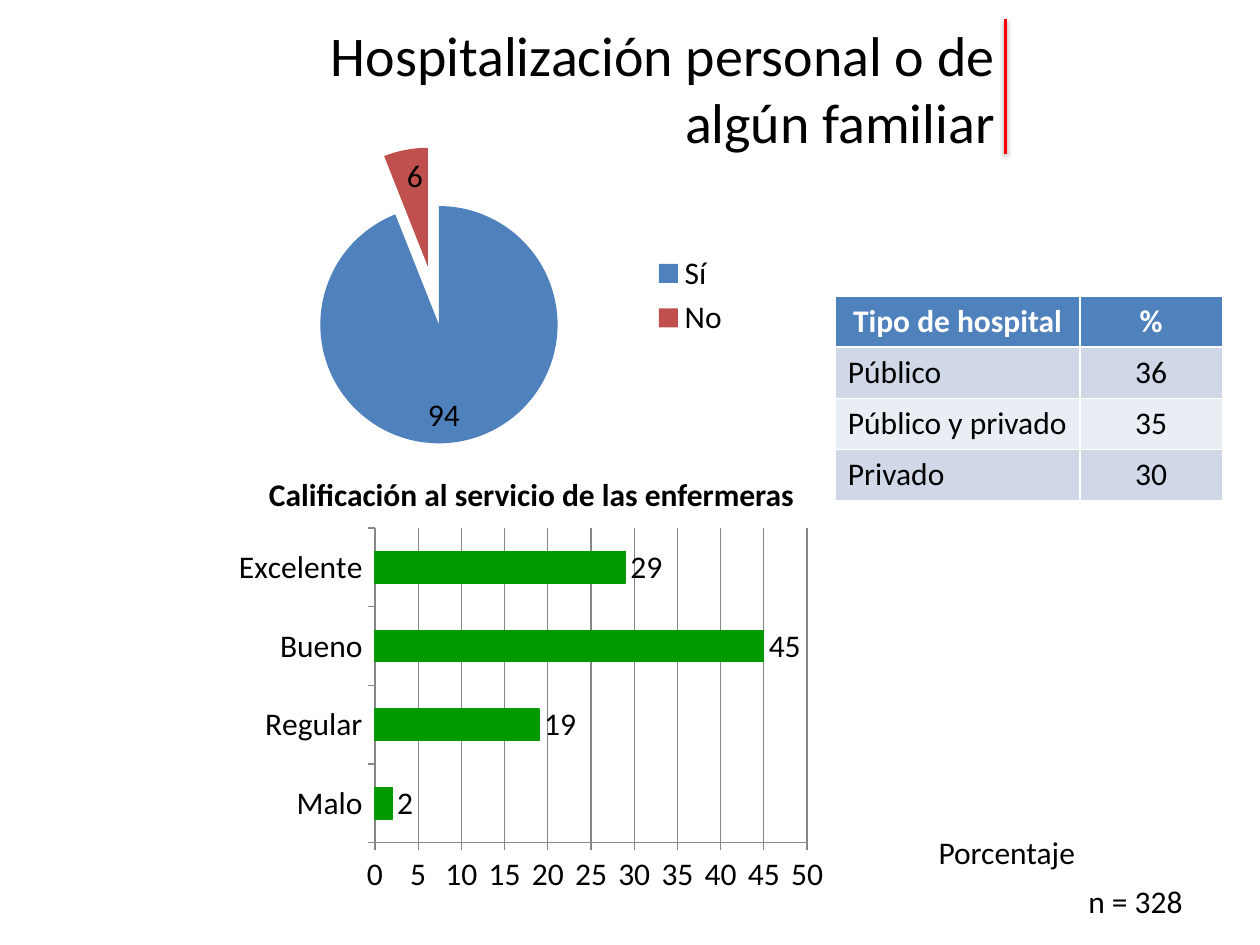
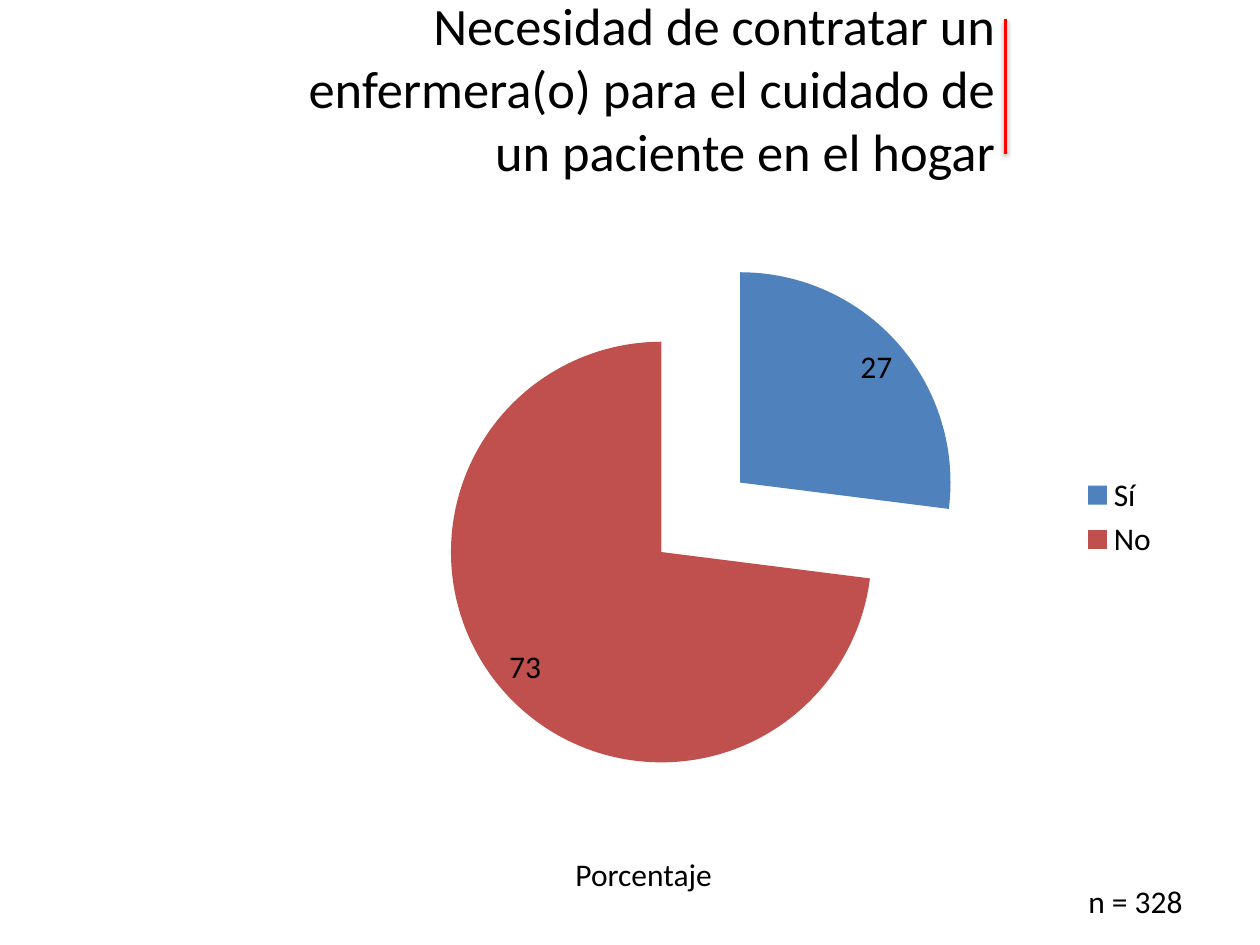
"""Build two survey slides about hospital stays and home nursing care."""
from lxml import etree
from pptx import Presentation
from pptx.chart.data import CategoryChartData
from pptx.dml.color import RGBColor
from pptx.enum.chart import XL_CHART_TYPE as ChartType
from pptx.enum.chart import XL_LABEL_POSITION as LabelPosition
from pptx.enum.chart import XL_LEGEND_POSITION as LegendPosition
from pptx.enum.chart import XL_TICK_MARK as TickMark
from pptx.enum.shapes import MSO_CONNECTOR as Connector
from pptx.enum.text import MSO_ANCHOR as Anchor
from pptx.enum.text import MSO_AUTO_SIZE as AutoSize
from pptx.enum.text import PP_ALIGN as Align
from pptx.oxml import parse_xml
from pptx.util import Cm, Pt

COLORS = {
    "text": "000000",
    "header_text": "FFFFFF",
    "rule": "FF0000",
    "yes": "4F81BD",
    "no": "C0504D",
    "bar": "009900",
    "grid": "868686",
    "header": "4F81BD",
    "odd_row": "D0D8E8",
    "even_row": "E9EDF4",
}
PALETTE = {name: RGBColor.from_string(value) for name, value in COLORS.items()}
FONT = "Calibri"
DRAWING = "http://schemas.openxmlformats.org/drawingml/2006/main"
RULE_SHADOW = (
    f'<a:effectLst xmlns:a="{DRAWING}">'
    '<a:outerShdw blurRad="40000" dist="20000" dir="5400000" rotWithShape="0">'
    '<a:srgbClr val="000000"><a:alpha val="38000"/></a:srgbClr>'
    "</a:outerShdw></a:effectLst>"
)


def write_text(frame, text, size=18, color="text", bold=False, align=Align.LEFT):
    paragraph = frame.paragraphs[0]
    paragraph.alignment = align
    run = paragraph.add_run()
    run.text = text
    run.font.name = FONT
    run.font.size = Pt(size)
    run.font.bold = bold
    run.font.color.rgb = PALETTE[color]


def add_label(slide, text, left, top, width, **text_format):
    frame = slide.shapes.add_textbox(Cm(left), Cm(top), Cm(width), Cm(1.03)).text_frame
    frame.word_wrap = False
    frame.auto_size = AutoSize.SHAPE_TO_FIT_TEXT
    write_text(frame, text, **text_format)


presentation = Presentation()
presentation.slide_width = Cm(25.4)
presentation.slide_height = Cm(19.05)

pages = [
    {
        "title": "Hospitalización personal o de algún familiar",
        "title_size": 32,
        "answers": (94, 6),
        "pie_box": (4.4, 2.62, 10.57, 6.68),
        "unit_place": (18.67, 16.66),
    },
    {
        "title": "Necesidad de contratar un enfermera(o) para el cuidado "
        "de un paciente en el hogar",
        "title_size": 30,
        "answers": (27, 73),
        "pie_box": (6.53, 4.78, 17.09, 11.3),
        "unit_place": (11.35, 17.12),
    },
]

for page in pages:
    slide = presentation.slides.add_slide(presentation.slide_layouts[5])

    rule = slide.shapes.add_connector(
        Connector.STRAIGHT, Cm(20.27), Cm(0.38), Cm(20.27), Cm(3.1)
    )
    rule.line.color.rgb = PALETTE["rule"]
    rule.line.width = Pt(2)
    rule._element.spPr.append(parse_xml(RULE_SHADOW))
    add_label(slide, "n = 328", 21.69, 17.65, 2.44)

    title = slide.shapes.title
    title.left, title.top = Cm(4.88), Cm(0.18)
    title.width, title.height = Cm(15.44), Cm(3.18)
    title.text_frame.word_wrap = True
    title.text_frame.auto_size = AutoSize.NONE
    title.text_frame.vertical_anchor = Anchor.MIDDLE
    write_text(
        title.text_frame, page["title"], size=page["title_size"], align=Align.RIGHT
    )

    pie_data = CategoryChartData()
    pie_data.categories = ["Sí", "No"]
    pie_data.add_series("Series 1", page["answers"])
    pie_box = [Cm(length) for length in page["pie_box"]]
    pie = slide.shapes.add_chart(ChartType.PIE, *pie_box, pie_data).chart
    pie.has_title = False
    pie.font.name = FONT
    pie.font.size = Pt(18)
    pie.font.color.rgb = PALETTE["text"]
    pie.has_legend = True
    pie.legend.position = LegendPosition.RIGHT
    pie.legend.include_in_layout = False
    pie_plot = pie.plots[0]
    pie_plot.vary_by_categories = True
    pie_plot.has_data_labels = True
    pie_plot.data_labels.show_value = True
    pie_plot.data_labels.show_percentage = False
    pie_plot.data_labels.position = LabelPosition.INSIDE_END
    answers = pie_plot.series[0]
    for index, answer in enumerate(("yes", "no")):
        fill = answers.points[index].format.fill
        fill.solid()
        fill.fore_color.rgb = PALETTE[answer]
    series_name = answers._element.tx
    chart_namespace = etree.QName(series_name).namespace
    explosion = etree.Element(f"{{{chart_namespace}}}explosion", val="25")
    series_name.addnext(explosion)

    add_label(slide, "Porcentaje", *page["unit_place"], 3.3)

hospital_slide = presentation.slides[0]

hospital_rows = [
    ("Tipo de hospital", "%"),
    ("Público", "36"),
    ("Público y privado", "35"),
    ("Privado", "30"),
]
table = hospital_slide.shapes.add_table(
    len(hospital_rows), 2, Cm(16.84), Cm(5.97), Cm(7.8), Cm(4.12)
).table
table.columns[0].width = Cm(4.93)
table.columns[1].width = Cm(2.87)
for row_index, values in enumerate(hospital_rows):
    is_header = row_index == 0
    row_fill = "header" if is_header else ("even_row", "odd_row")[row_index % 2]
    for column_index, value in enumerate(values):
        cell = table.cell(row_index, column_index)
        cell.fill.solid()
        cell.fill.fore_color.rgb = PALETTE[row_fill]
        write_text(
            cell.text_frame,
            value,
            bold=is_header,
            color="header_text" if is_header else "text",
            align=Align.CENTER if is_header or column_index else Align.LEFT,
        )

rating_data = CategoryChartData()
rating_data.categories = ["Malo", "Regular", "Bueno", "Excelente"]
rating_data.add_series("Series 1", (2, 19, 45, 29))
rating_chart = hospital_slide.shapes.add_chart(
    ChartType.BAR_CLUSTERED, Cm(4.57), Cm(10.49), Cm(12.27), Cm(7.67), rating_data
).chart
rating_chart.has_title = False
rating_chart.has_legend = False
rating_chart.font.name = FONT
rating_chart.font.size = Pt(18)
rating_chart.font.color.rgb = PALETTE["text"]
rating_plot = rating_chart.plots[0]
rating_plot.gap_width = 150
rating_plot.vary_by_categories = False
rating_plot.has_data_labels = True
rating_plot.data_labels.show_value = True
rating_plot.data_labels.position = LabelPosition.OUTSIDE_END
ratings = rating_plot.series[0].format
ratings.fill.solid()
ratings.fill.fore_color.rgb = PALETTE["bar"]
ratings.line.color.rgb = PALETTE["bar"]
ratings.line.width = Pt(0.75)

value_axis = rating_chart.value_axis
value_axis.minimum_scale = 0
value_axis.maximum_scale = 50
value_axis.major_unit = 5
value_axis.has_major_gridlines = True
value_axis.major_gridlines.format.line.color.rgb = PALETTE["grid"]
for axis in (rating_chart.category_axis, value_axis):
    axis.major_tick_mark = TickMark.OUTSIDE
    axis.format.line.color.rgb = PALETTE["grid"]

add_label(
    hospital_slide,
    "Calificación al servicio de las enfermeras",
    5.13,
    9.45,
    11.18,
    bold=True,
    align=Align.CENTER,
)

presentation.save("out.pptx")
